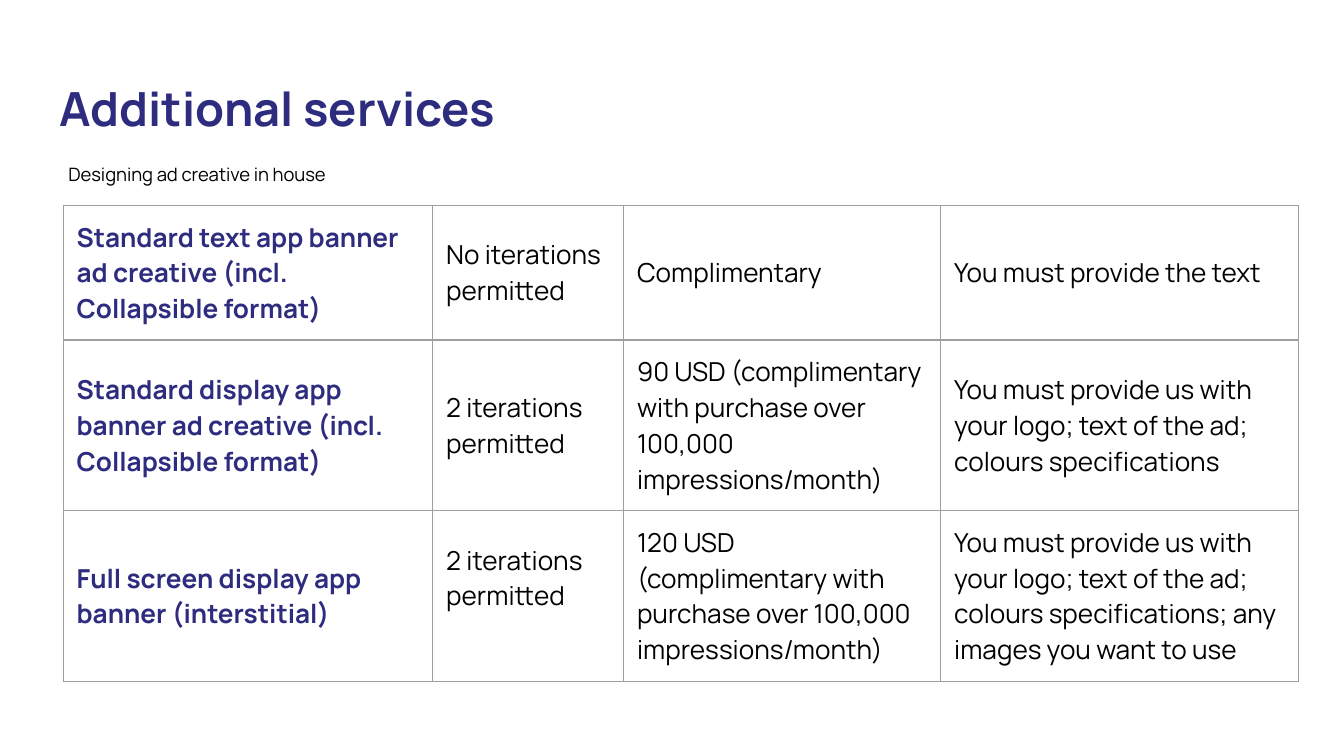
from dataclasses import dataclass

from lxml.etree import SubElement
from pptx import Presentation
from pptx.dml.color import RGBColor
from pptx.enum.text import MSO_ANCHOR, PP_ALIGN
from pptx.oxml.ns import qn
from pptx.util import Inches, Pt


@dataclass(frozen=True)
class Theme:
    font: str = "Manrope"
    accent: str = "2E2C7E"
    text: str = "000000"
    background: str = "FFFFFF"
    border: str = "9E9E9E"
    border_width: float = 0.75
    title_size: float = 25.2
    subtitle_size: float = 9.9
    table_size: float = 14


THEME = Theme()
SLIDE_WIDTH = Inches(10)
SLIDE_HEIGHT = SLIDE_WIDTH * 9 // 16
MARGINS = {f"margin_{side}": Inches(0.1) for side in ("left", "right", "top", "bottom")}

COLUMN_WIDTHS = (2.75, 1.42, 2.36, 2.66)
ROW_HEIGHTS = (1.0, 1.27, 1.27)
SERVICES = (
    ("Standard text app banner ad creative (incl. Collapsible format)",
     "No iterations permitted",
     "Complimentary",
     "You must provide the text"),
    ("Standard display app banner ad creative (incl. Collapsible format)",
     "2 iterations permitted",
     "90 USD (complimentary with purchase over 100,000 impressions/month)",
     "You must provide us with your logo; text of the ad; colours specifications"),
    ("Full screen display app banner (interstitial)",
     "2 iterations permitted",
     "120 USD (complimentary with purchase over 100,000 impressions/month)",
     "You must provide us with your logo; text of the ad; colours specifications; "
     "any images you want to use"),
)


def apply_format(target, values):
    for name, value in values.items():
        setattr(target, name, value)


def write_text(frame, text, size, color, bold=False):
    paragraph = frame.paragraphs[0]
    paragraph.alignment = PP_ALIGN.LEFT
    run = paragraph.add_run()
    run.text = text
    apply_format(run.font, {"name": THEME.font, "size": Pt(size), "bold": bold})
    run.font.color.rgb = RGBColor.from_string(color)


def add_title(slide, text):
    title = slide.shapes.title
    apply_format(title, {"left": Inches(0.34), "top": Inches(0.49),
                         "width": Inches(9.32), "height": Inches(0.63)})
    apply_format(title.text_frame, MARGINS | {
        "word_wrap": True, "vertical_anchor": MSO_ANCHOR.MIDDLE})
    write_text(title.text_frame, text, THEME.title_size, THEME.accent, bold=True)


def add_subtitle(slide, text):
    subtitle = slide.shapes.add_textbox(
        Inches(0.41), Inches(1.1), Inches(9.32), Inches(0.54))
    apply_format(subtitle.text_frame, MARGINS | {
        "word_wrap": True, "vertical_anchor": MSO_ANCHOR.TOP})
    write_text(subtitle.text_frame, text, THEME.subtitle_size, THEME.text)
    apply_format(subtitle.text_frame.paragraphs[0],
                 {"line_spacing": 1.12, "space_after": Pt(12)})


def add_borders(cell):
    """Draw all four cell edges; call before the fill is set to keep schema order."""
    properties = cell._tc.get_or_add_tcPr()
    for edge in ("a:lnL", "a:lnR", "a:lnT", "a:lnB"):
        line = SubElement(properties, qn(edge), w=str(Pt(THEME.border_width)))
        fill = SubElement(line, qn("a:solidFill"))
        SubElement(fill, qn("a:srgbClr"), val=THEME.border)


def format_cell(cell, text, is_service_name):
    add_borders(cell)
    cell.fill.solid()
    cell.fill.fore_color.rgb = RGBColor.from_string(THEME.background)
    apply_format(cell, MARGINS | {"vertical_anchor": MSO_ANCHOR.MIDDLE})
    color = THEME.accent if is_service_name else THEME.text
    write_text(cell.text_frame, text, THEME.table_size, color, bold=is_service_name)


def add_services_table(slide):
    table = slide.shapes.add_table(
        len(SERVICES), len(COLUMN_WIDTHS), Inches(0.47), Inches(1.53),
        Inches(sum(COLUMN_WIDTHS)), Inches(sum(ROW_HEIGHTS))).table
    apply_format(table, {"first_row": False, "horz_banding": False})
    for column, width in zip(table.columns, COLUMN_WIDTHS):
        column.width = Inches(width)
    for row, height, texts in zip(table.rows, ROW_HEIGHTS, SERVICES):
        row.height = Inches(height)
        for index, (cell, text) in enumerate(zip(row.cells, texts)):
            format_cell(cell, text, is_service_name=index == 0)
    # The last iterations note sits one half line above the row's middle.
    table.cell(2, 1).margin_bottom = Inches(0.37)


def main():
    presentation = Presentation()
    apply_format(presentation, {"slide_width": SLIDE_WIDTH, "slide_height": SLIDE_HEIGHT})
    slide = presentation.slides.add_slide(presentation.slide_layouts.get_by_name("Title Only"))
    slide.background.fill.solid()
    slide.background.fill.fore_color.rgb = RGBColor.from_string(THEME.background)
    add_title(slide, "Additional services")
    add_subtitle(slide, "Designing ad creative in house")
    add_services_table(slide)
    presentation.save("out.pptx")


if __name__ == "__main__":
    main()
